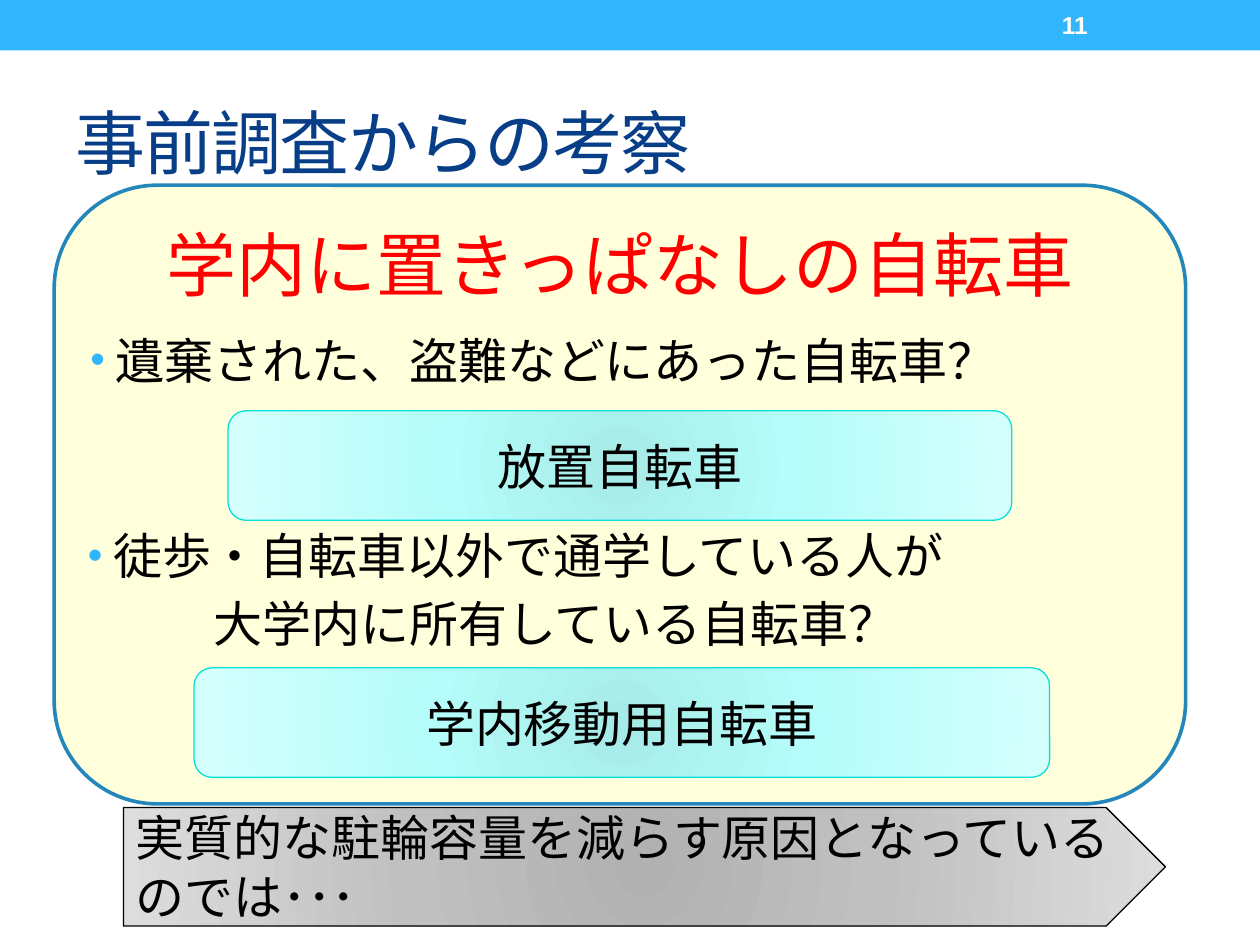
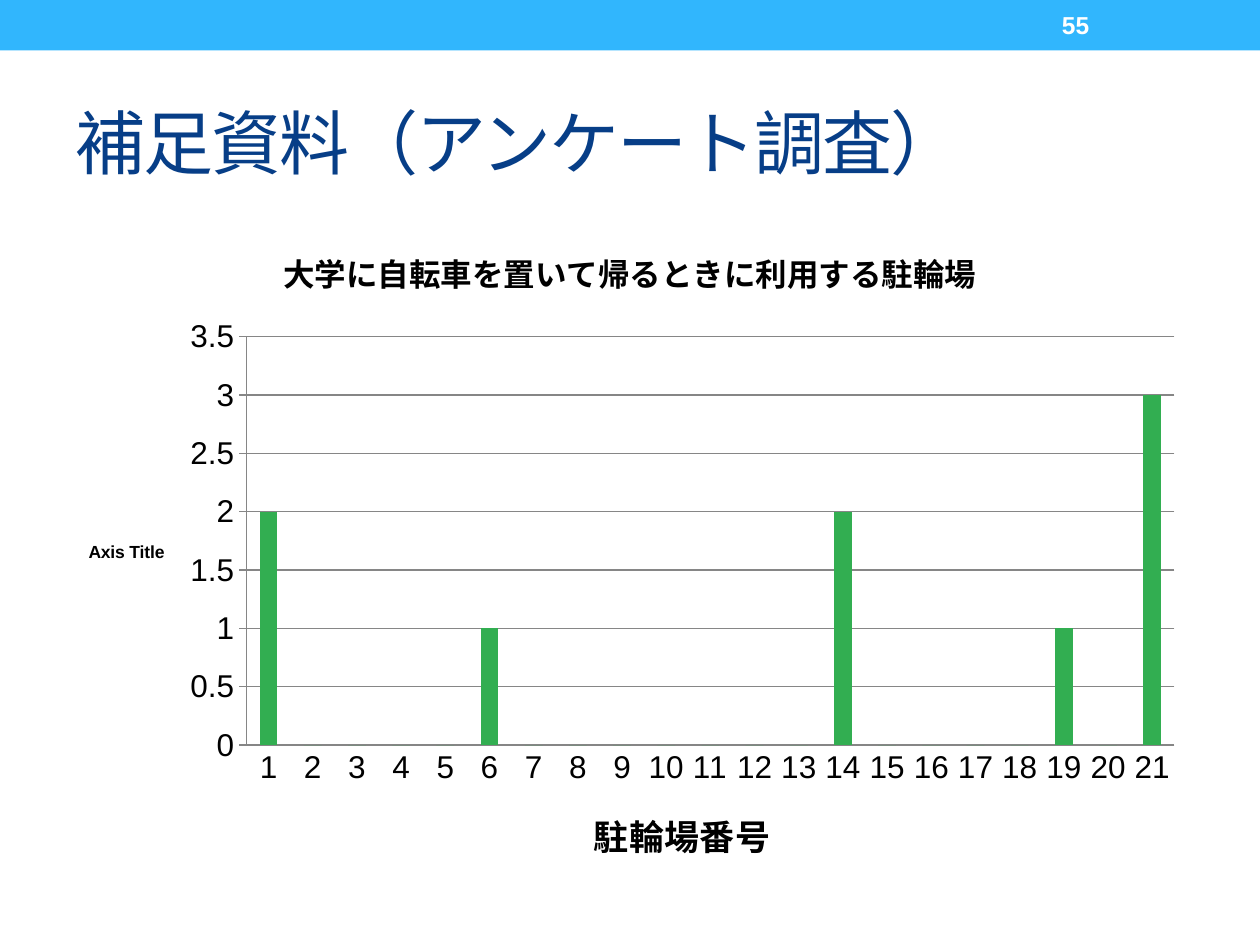
from dataclasses import dataclass

from lxml.etree import SubElement
from pptx import Presentation
from pptx.chart.data import CategoryChartData
from pptx.dml.color import RGBColor
from pptx.enum.chart import XL_CHART_TYPE, XL_TICK_MARK
from pptx.enum.shapes import MSO_SHAPE
from pptx.enum.text import MSO_ANCHOR, PP_ALIGN
from pptx.oxml import parse_xml
from pptx.oxml.ns import nsdecls, qn
from pptx.util import Inches, Pt


@dataclass(frozen=True)
class Theme:
    font: str = "Arial"
    band: str = "31B6FD"
    title: str = "073E87"
    text: str = "000000"
    white: str = "FFFFFF"
    emphasis: str = "FF0000"
    panel: str = "FFFF99"
    panel_line: str = "2487BB"
    aqua: tuple = ("A7EBE8", "B4FDFA", "D5FFFD")
    aqua_line: str = "05E0DB"
    gray: tuple = ("B1B1B1", "C0C0C0", "DDDDDD")
    bar: str = "32AE51"
    grid: str = "868686"
    title_size: int = 40
    body_size: int = 28
    axis_title_size: int = 20
    chart_size: int = 18
    number_size: int = 14
    small_size: int = 10


class Deck:
    def __init__(self, theme):
        self.theme = theme
        self.presentation = Presentation()
        self.presentation.slide_width = Inches(10)
        self.presentation.slide_height = Inches(7.5)
        self.slide = None

    def start_slide(self, title, number):
        """Add a slide with the top band, its title and its page number."""
        theme = self.theme
        self.slide = self.presentation.slides.add_slide(self.presentation.slide_layouts[6])
        band = self.shape(MSO_SHAPE.RECTANGLE, (0, 0, 10, 0.4))
        self.fill_solid(band, theme.band)
        band.line.fill.background()
        heading = self.text_box((0.5, 0.58, 9, 1.08), [title], theme.title_size,
                                theme.title, MSO_ANCHOR.MIDDLE)[0]
        heading._p.get_or_add_pPr().get_or_add_defRPr().set("spc", "-100")
        page = self.text_box((8.33, 0.02, 1.17, 0.36), [number], theme.number_size,
                             theme.white, MSO_ANCHOR.MIDDLE)[0]
        page.font.bold = True

    def style_font(self, font, size, color, bold=None):
        font.name = self.theme.font
        font.size = Pt(size)
        font.bold = bold
        font.color.rgb = RGBColor.from_string(color)

    def set_text(self, shape, lines, size, color, anchor, align=PP_ALIGN.LEFT):
        frame = shape.text_frame
        frame.word_wrap = True
        frame.vertical_anchor = anchor
        frame.text = "\n".join(lines)
        for paragraph in frame.paragraphs:
            paragraph.alignment = align
            self.style_font(paragraph.font, size, color)
        return frame.paragraphs

    def text_box(self, box, lines, size, color, anchor=MSO_ANCHOR.TOP):
        shape = self.slide.shapes.add_textbox(*map(Inches, box))
        return self.set_text(shape, lines, size, color, anchor)

    def bullet_text(self, box, lines):
        """Place a bulleted first line; later lines are indented without a bullet."""
        paragraphs = self.text_box(box, lines, self.theme.body_size, self.theme.text)
        for index, paragraph in enumerate(paragraphs):
            paragraph.space_before = Pt(5.6)
            properties = paragraph._p.get_or_add_pPr()
            if index:
                properties.set("marL", str(Inches(1)))
                continue
            properties.set("marL", str(Inches(0.2)))
            properties.set("indent", str(-Inches(0.2)))
            bullet = [
                f'<a:buClr {nsdecls("a")}><a:srgbClr val="{self.theme.band}"/></a:buClr>',
                f'<a:buSzPct {nsdecls("a")} val="85000"/>',
                f'<a:buFont {nsdecls("a")} typeface="{self.theme.font}"/>',
                f'<a:buChar {nsdecls("a")} char="•"/>',
            ]
            default_run = properties.find(qn("a:defRPr"))
            for element in bullet:
                default_run.addprevious(parse_xml(element))

    def shape(self, kind, box):
        shape = self.slide.shapes.add_shape(kind, *map(Inches, box))
        shape.shadow.inherit = False
        return shape

    def fill_solid(self, shape, color, opacity=None):
        shape.fill.solid()
        shape.fill.fore_color.rgb = RGBColor.from_string(color)
        if opacity is not None:
            color_element = shape._element.spPr.find(".//" + qn("a:srgbClr"))
            SubElement(color_element, qn("a:alpha")).set("val", str(opacity * 1000))

    def outline(self, shape, color, width):
        shape.line.color.rgb = RGBColor.from_string(color)
        shape.line.width = Pt(width)

    def panel(self, box, heading):
        theme = self.theme
        panel = self.shape(MSO_SHAPE.FLOWCHART_ALTERNATE_PROCESS, box)
        self.fill_solid(panel, theme.panel, 35)
        self.outline(panel, theme.panel_line, 2.08)
        self.set_text(panel, [heading], theme.title_size, theme.emphasis,
                      MSO_ANCHOR.TOP, PP_ALIGN.CENTER)

    def glow_shape(self, kind, box, text, colors, line, align):
        """Add a labelled shape whose fill lightens from its centre outwards."""
        shape = self.shape(kind, box)
        stops = "".join(
            f'<a:gs pos="{position * 1000}"><a:srgbClr val="{color}"/></a:gs>'
            for position, color in zip((0, 45, 100), colors))
        gradient = parse_xml(
            f'<a:gradFill {nsdecls("a")} rotWithShape="1"><a:gsLst>{stops}</a:gsLst>'
            '<a:path path="circle"><a:fillToRect l="100000" t="100000" r="100000" b="100000"/>'
            '</a:path></a:gradFill>')
        shape._element.spPr.find(qn("a:prstGeom")).addnext(gradient)
        self.outline(shape, line, 0.75)
        self.set_text(shape, [text], self.theme.body_size, self.theme.text,
                      MSO_ANCHOR.MIDDLE, align)

    def chart_title(self, owner_title, text, size):
        frame = owner_title.text_frame
        frame.text = text
        self.style_font(frame.paragraphs[0].font, size, self.theme.text, True)
        return frame

    def column_chart(self, box, title, category_title, value_title, values):
        theme = self.theme
        data = CategoryChartData()
        data.categories = [str(number) for number in range(1, len(values) + 1)]
        data.add_series("Series 1", values)
        chart = self.slide.shapes.add_chart(
            XL_CHART_TYPE.COLUMN_CLUSTERED, *map(Inches, box), data).chart
        self.style_font(chart.font, theme.small_size, theme.text)
        chart.has_legend = False
        self.chart_title(chart.chart_title, title, theme.chart_size)
        chart.chart_title.include_in_layout = False

        plot = chart.plots[0]
        plot.vary_by_categories = False
        plot.gap_width = 150
        bars = plot.series[0].format.fill
        bars.solid()
        bars.fore_color.rgb = RGBColor.from_string(theme.bar)

        category_axis, value_axis = chart.category_axis, chart.value_axis
        category_axis.major_tick_mark = XL_TICK_MARK.NONE
        value_axis.major_tick_mark = XL_TICK_MARK.OUTSIDE
        value_axis.has_major_gridlines = True
        for axis in (category_axis, value_axis):
            self.style_font(axis.tick_labels.font, theme.chart_size, theme.text)
        for line in (category_axis.format.line, value_axis.format.line,
                     value_axis.major_gridlines.format.line):
            line.color.rgb = RGBColor.from_string(theme.grid)
            line.width = Pt(0.75)
        self.chart_title(category_axis.axis_title, category_title, theme.axis_title_size)
        value_frame = self.chart_title(value_axis.axis_title, value_title, theme.small_size)
        value_frame._txBody.bodyPr.set("rot", "0")


def build_findings(deck):
    theme = deck.theme
    deck.start_slide("事前調査からの考察", "11")
    deck.panel((0.43, 1.47, 8.98, 4.91), "学内に置きっぱなしの自転車")
    deck.bullet_text((0.62, 2.57, 9, 0.69), ["遺棄された、盗難などにあった自転車？"])
    deck.bullet_text((0.6, 4.12, 9, 2.03),
                     ["徒歩・自転車以外で通学している人が", "大学内に所有している自転車？"])
    for box, label in (((1.81, 3.26, 6.22, 0.87), "放置自転車"),
                       ((1.54, 5.3, 6.79, 0.87), "学内移動用自転車")):
        deck.glow_shape(MSO_SHAPE.ROUNDED_RECTANGLE, box, label,
                        theme.aqua, theme.aqua_line, PP_ALIGN.CENTER)
    deck.glow_shape(MSO_SHAPE.PENTAGON, (0.98, 6.41, 8.27, 0.94),
                    "実質的な駐輪容量を減らす原因となっているのでは･･･",
                    theme.gray, theme.text, PP_ALIGN.LEFT)


def build_survey(deck):
    deck.start_slide("補足資料（アンケート調査）", "55")
    users_by_lot = {1: 2, 6: 1, 14: 2, 19: 1, 21: 3}
    deck.column_chart((0.5, 1.75, 9, 5.33), "大学に自転車を置いて帰るときに利用する駐輪場",
                      "駐輪場番号", "Axis Title",
                      [users_by_lot.get(lot, 0) for lot in range(1, 22)])


def main():
    deck = Deck(Theme())
    build_findings(deck)
    build_survey(deck)
    deck.presentation.save("out.pptx")


if __name__ == "__main__":
    main()
